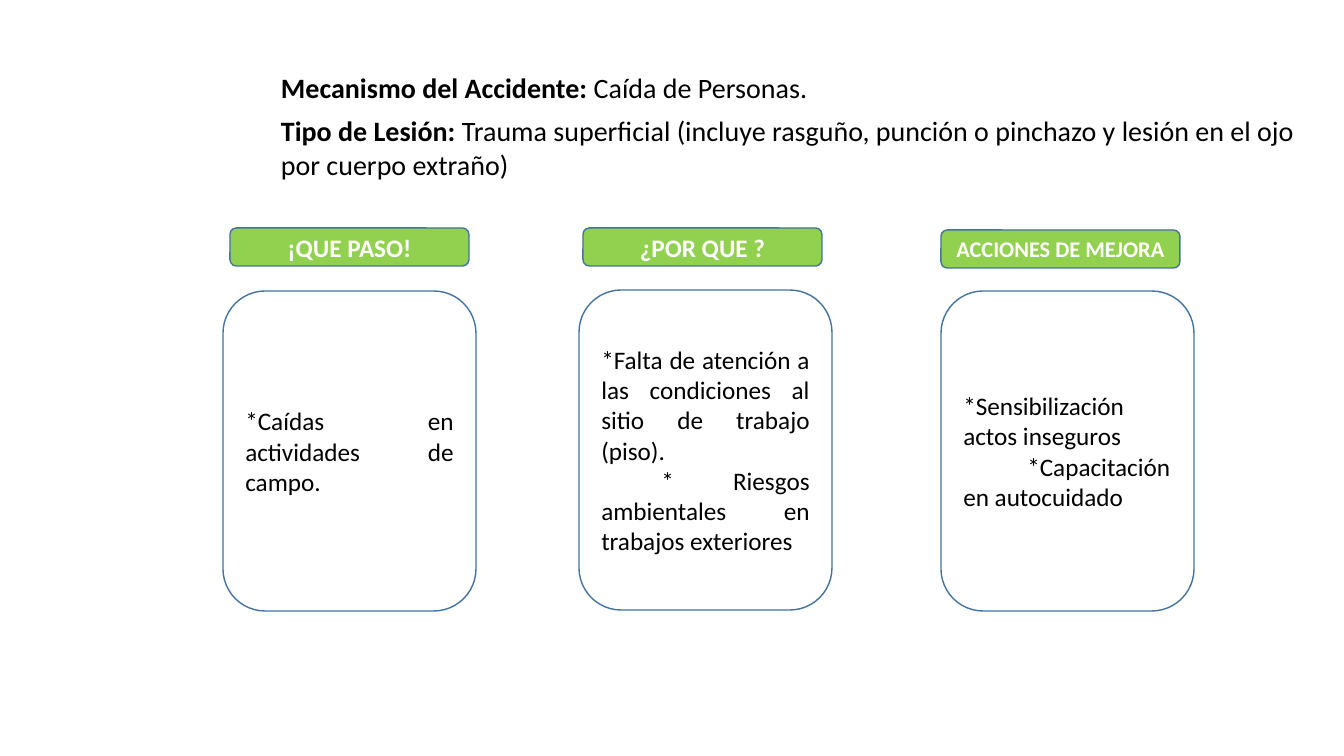
from dataclasses import dataclass

from pptx import Presentation
from pptx.dml.color import RGBColor
from pptx.enum.shapes import MSO_SHAPE
from pptx.enum.text import MSO_ANCHOR, PP_ALIGN
from pptx.util import Pt

EMU_PER_PX = 914400 / 100.8


@dataclass(frozen=True)
class Theme:
    font: str = "Calibri"
    ink: str = "000000"
    paper: str = "FFFFFF"
    green: str = "92D050"
    outline: str = "43739E"
    fact_size: int = 20
    body_size: int = 18
    small_size: int = 16


THEME = Theme()


def px(length):
    return round(length * EMU_PER_PX)


def style_run(run, size, color, bold=False):
    run.font.name = THEME.font
    run.font.size = Pt(size)
    run.font.bold = bold
    run.font.color.rgb = RGBColor.from_string(color)


def add_fact(slide, top, width, height, label, detail):
    """Bold label followed by its detail."""
    fact = slide.shapes.add_textbox(px(271), px(top), px(width), px(height))
    fact.text_frame.word_wrap = True
    paragraph = fact.text_frame.paragraphs[0]
    for words, bold in ((label + " ", True), (detail, False)):
        run = paragraph.add_run()
        run.text = words
        style_run(run, THEME.fact_size, THEME.ink, bold)


def add_panel(slide, left, top, width, height, fill):
    """Outlined rounded rectangle with vertically centred text."""
    panel = slide.shapes.add_shape(
        MSO_SHAPE.ROUNDED_RECTANGLE, px(left), px(top), px(width), px(height))
    panel.shadow.inherit = False
    panel.fill.solid()
    panel.fill.fore_color.rgb = RGBColor.from_string(fill)
    panel.line.color.rgb = RGBColor.from_string(THEME.outline)
    panel.line.width = Pt(1)
    panel.text_frame.word_wrap = True
    panel.text_frame.vertical_anchor = MSO_ANCHOR.MIDDLE
    return panel.text_frame


def add_heading(slide, left, top, title, size):
    heading = add_panel(slide, left, top, 239, 38, THEME.green)
    heading.text = title
    heading.paragraphs[0].alignment = PP_ALIGN.CENTER
    style_run(heading.paragraphs[0].runs[0], size, THEME.paper, bold=True)


def add_card(slide, left, top, items, indent):
    """Justified items; those after the first start with an indent."""
    card = add_panel(slide, left, top, 253, 320, THEME.paper)
    card.text = "\n".join(items)
    for position, paragraph in enumerate(card.paragraphs):
        paragraph.alignment = PP_ALIGN.JUSTIFY
        if position:
            paragraph._p.get_or_add_pPr().set("indent", str(px(indent)))
        style_run(paragraph.runs[0], THEME.body_size, THEME.ink)


def main():
    deck = Presentation()
    deck.slide_width, deck.slide_height = px(1344), px(756)
    slide = deck.slides.add_slide(deck.slide_layouts[6])

    # Accident facts
    add_fact(slide, 66, 865, 44, "Mecanismo del Accidente:", "Caída de Personas.")
    add_fact(slide, 109, 1051, 78, "Tipo de Lesión:",
             "Trauma superficial (incluye rasguño, punción o pinchazo "
             "y lesión en el ojo por cuerpo extraño)")

    # Columns: heading place, title and size, then card place, items and indent
    columns = [
        ((230, 228, "¡QUE PASO!", THEME.body_size),
         (223, 291, ["*Caídas en actividades de campo."], 0)),
        ((583, 228, "¿POR QUE ?", THEME.body_size),
         (579, 290, ["*Falta de atención a las condiciones al sitio de trabajo (piso).",
                     "* Riesgos ambientales en trabajos exteriores"], 60)),
        ((941, 230, "ACCIONES DE MEJORA", THEME.small_size),
         (941, 291, ["*Sensibilización actos inseguros",
                     "*Capacitación en autocuidado"], 64)),
    ]
    for heading, card in columns:
        add_card(slide, *card)
        add_heading(slide, *heading)

    deck.save("out.pptx")


if __name__ == "__main__":
    main()
